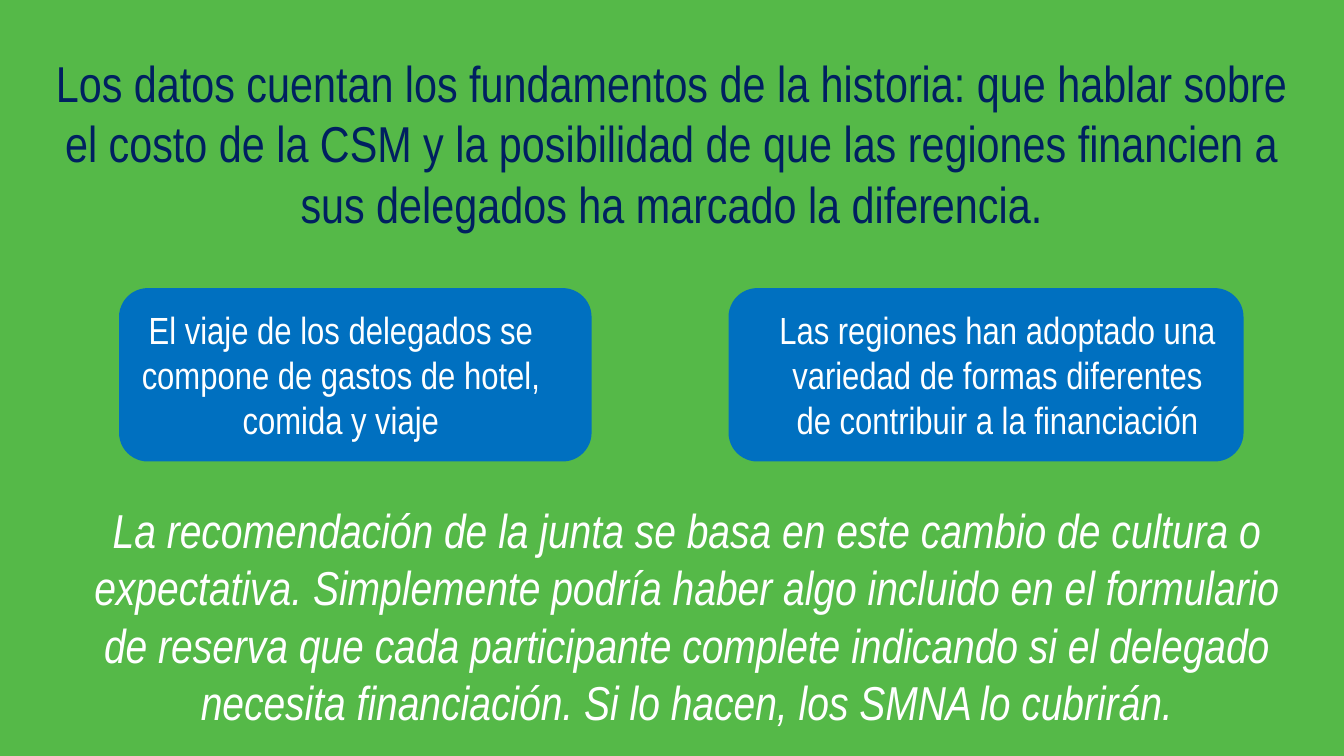
from dataclasses import dataclass

from pptx import Presentation
from pptx.dml.color import RGBColor
from pptx.enum.shapes import MSO_SHAPE as Preset
from pptx.enum.text import MSO_ANCHOR as Anchor, PP_ALIGN as Align
from pptx.slide import Slide
from pptx.util import Cm, Pt

GREEN = RGBColor(0x55, 0xB9, 0x48)
NAVY = RGBColor(0x00, 0x20, 0x60)
BLUE = RGBColor(0x00, 0x70, 0xC0)
WHITE = RGBColor(0xFF, 0xFF, 0xFF)
FONT = "Arial Narrow"
CARD_TOP, CARD_HEIGHT = 7.26, 4.37
LABEL_TOP, LABEL_HEIGHT = 7.59, 3.71


@dataclass(frozen=True)
class TextBlock:
    text: str
    left: float
    top: float
    width: float
    height: float
    size: float
    color: RGBColor = WHITE
    italic: bool = False
    anchor: Anchor = Anchor.MIDDLE
    inset_x: float = 0.1
    inset_y: float = 0.1


@dataclass(frozen=True)
class Card:
    left: float
    width: float
    label_left: float
    label_width: float
    text: str


RECOMMENDATION = TextBlock(
    "La recomendación de la junta se basa en este cambio de cultura o expectativa. "
    "Simplemente podría haber algo incluido en el formulario de reserva que cada "
    "participante complete indicando si el delegado necesita financiación. "
    "Si lo hacen, los SMNA lo cubrirán.",
    2.01, 12.5, 30.61, 6.02, 34, italic=True,
)
TITLE = TextBlock(
    "Los datos cuentan los fundamentos de la historia: que hablar sobre el costo de "
    "la CSM y la posibilidad de que las regiones financien a sus delegados ha marcado "
    "la diferencia.",
    1.24, 1.14, 31.37, 4.9, 36, NAVY, inset_x=0.15, inset_y=0.15,
)
CARDS = (
    Card(3, 11.91, 3, 11.18,
         "El viaje de los delegados se compone de gastos de hotel, comida y viaje"),
    Card(18.36, 12.98, 19.18, 11.91,
         "Las regiones han adoptado una variedad de formas diferentes de contribuir "
         "a la financiación"),
)


def draw_text(page: Slide, block: TextBlock) -> None:
    box = page.shapes.add_textbox(
        Cm(block.left), Cm(block.top), Cm(block.width), Cm(block.height)
    )
    frame = box.text_frame
    frame.word_wrap = True
    frame.vertical_anchor = block.anchor
    frame.margin_left = frame.margin_right = Cm(block.inset_x)
    frame.margin_top = frame.margin_bottom = Cm(block.inset_y)
    para = frame.paragraphs[0]
    para.text = block.text
    para.alignment = Align.CENTER
    para.font.name = FONT
    para.font.size = Pt(block.size)
    para.font.italic = block.italic
    para.font.color.rgb = block.color


def draw_card(page: Slide, card: Card) -> None:
    panel = page.shapes.add_shape(
        Preset.ROUNDED_RECTANGLE,
        Cm(card.left), Cm(CARD_TOP), Cm(card.width), Cm(CARD_HEIGHT),
    )
    panel.shadow.inherit = False
    panel.fill.solid()
    panel.fill.fore_color.rgb = BLUE
    panel.line.fill.background()
    draw_text(page, TextBlock(
        card.text, card.label_left, LABEL_TOP, card.label_width, LABEL_HEIGHT, 27,
        anchor=Anchor.TOP, inset_x=0.25, inset_y=0.13,
    ))


def main() -> None:
    deck = Presentation()
    deck.slide_width, deck.slide_height = Cm(33.87), Cm(19.05)
    page = deck.slides.add_slide(deck.slide_layouts[6])
    page.background.fill.solid()
    page.background.fill.fore_color.rgb = GREEN
    for block in (RECOMMENDATION, TITLE):
        draw_text(page, block)
    for card in CARDS:
        draw_card(page, card)
    deck.save("out.pptx")


if __name__ == "__main__":
    main()
